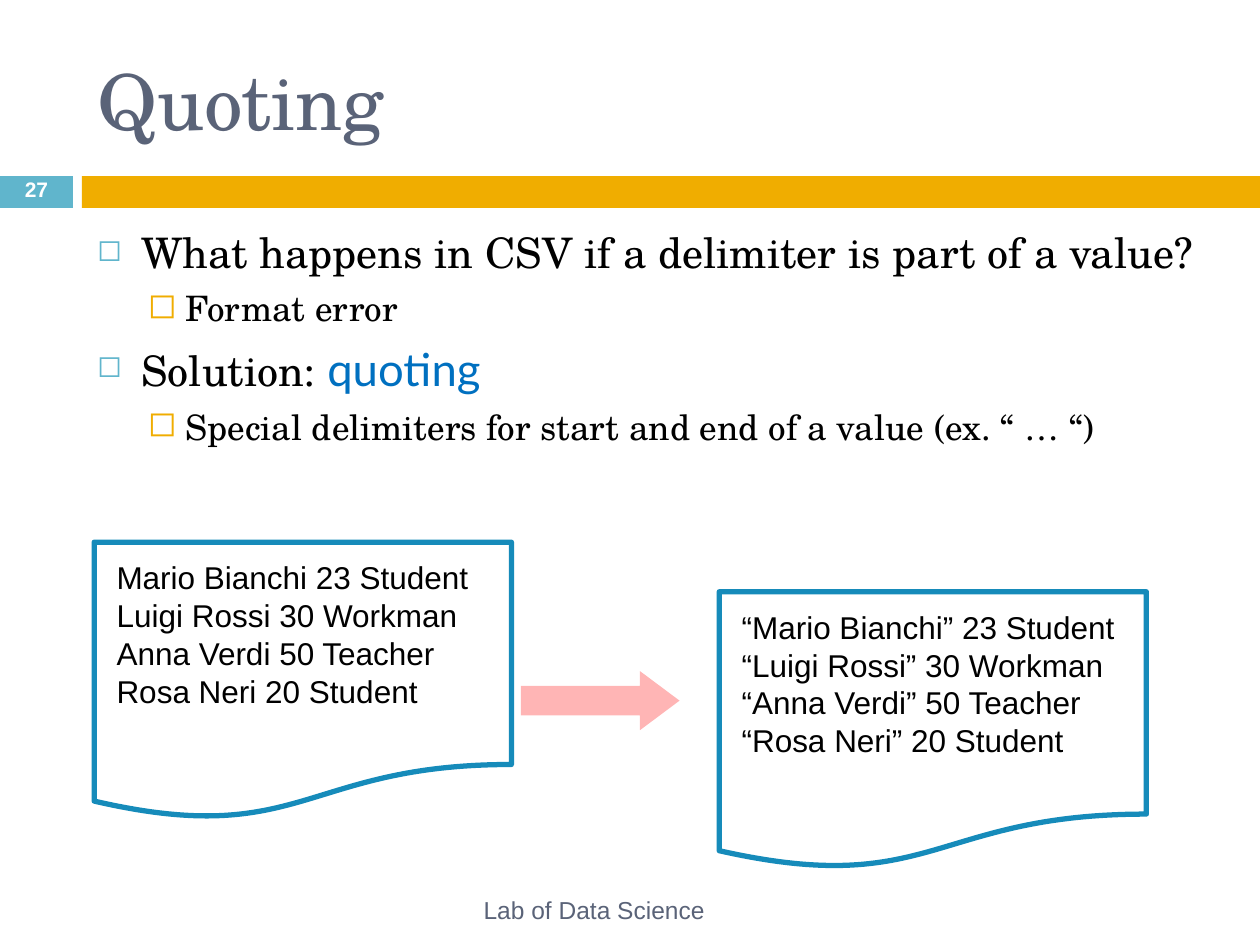
from lxml import etree
from pptx import Presentation
from pptx.dml.color import RGBColor
from pptx.enum.shapes import MSO_SHAPE
from pptx.enum.text import MSO_ANCHOR, PP_ALIGN
from pptx.oxml.ns import qn
from pptx.util import Cm, Pt

RECTANGLE = MSO_SHAPE.RECTANGLE
DOCUMENT = MSO_SHAPE.FLOWCHART_DOCUMENT
RIGHT_ARROW = MSO_SHAPE.RIGHT_ARROW
TOP, MIDDLE = MSO_ANCHOR.TOP, MSO_ANCHOR.MIDDLE
LEFT, CENTER = PP_ALIGN.LEFT, PP_ALIGN.CENTER
SERIF, SANS, ACCENT_FONT = "TeX Gyre Schola", "Arial", "Lato"
BULLET = "◻"
COLORS = {
    "title": "5A6378", "text": "000000", "white": "FFFFFF", "teal": "60B5CC",
    "amber": "F0AD00", "keyword": "0070C0", "outline": "168BBA", "arrow": "FF0000",
}
LEVELS = [
    {"margin": 0.89, "hang": 0.89, "scale": 72, "color": "teal"},
    {"margin": 1.78, "hang": 0.76, "scale": 100, "color": "amber"},
]
BULLETS = [
    (0, 0, [("What happens in CSV if a delimiter is part of a value?", SERIF, 24, "text")]),
    (1, 5.5, [("Format error", SERIF, 20, "text")]),
    (0, 7, [("Solution: ", SERIF, 24, "text"), ("quoting", ACCENT_FONT, 26, "keyword")]),
    (1, 5.5, [("Special delimiters for start and end of a value (ex. “ … “)", SERIF, 20, "text")]),
]
RECORDS = [
    ("Mario Bianchi", "23 Student"),
    ("Luigi Rossi", "30 Workman"),
    ("Anna Verdi", "50 Teacher"),
    ("Rosa Neri", "20 Student"),
]


def rgb(name):
    """Return the named colour."""
    return RGBColor.from_string(COLORS[name])


def add_run(paragraph, text, font, size, color, bold=False):
    """Append one formatted run."""
    run = paragraph.add_run()
    run.text = text
    run.font.name, run.font.size, run.font.bold = font, Pt(size), bold
    run.font.color.rgb = rgb(color)


def add_frame(slide, box, anchor=TOP):
    """Add a wrapping text box and return its text frame."""
    frame = slide.shapes.add_textbox(*map(Cm, box)).text_frame
    frame.word_wrap = True
    frame.vertical_anchor = anchor
    return frame


def add_line(slide, box, text, font, size, color, align=LEFT, bold=False):
    """Add a single middle-anchored line of text and return its paragraph."""
    paragraph = add_frame(slide, box, MIDDLE).paragraphs[0]
    paragraph.alignment = align
    add_run(paragraph, text, font, size, color, bold)
    return paragraph


def add_shape(slide, kind, box, fill=None, outline=None):
    """Add a flat preset shape."""
    shape = slide.shapes.add_shape(kind, *map(Cm, box))
    shape.shadow.inherit = False
    if fill:
        shape.fill.solid()
        shape.fill.fore_color.rgb = rgb(fill)
    else:
        shape.fill.background()
    if outline:
        shape.line.color.rgb = rgb(outline)
        shape.line.width = Pt(3)
    else:
        shape.line.fill.background()
    return shape


def set_bullet(paragraph, level):
    """Give a paragraph the indent and bullet of its level."""
    properties = paragraph._p.get_or_add_pPr()
    properties.set("marL", str(Cm(level["margin"])))
    properties.set("indent", str(-Cm(level["hang"])))
    color = etree.SubElement(properties, qn("a:buClr"))
    etree.SubElement(color, qn("a:srgbClr"), val=COLORS[level["color"]])
    etree.SubElement(properties, qn("a:buSzPct"), val=str(level["scale"] * 1000))
    etree.SubElement(properties, qn("a:buChar"), char=BULLET)


def add_band(slide, left, top, width, height):
    """Draw the divider band with the slide number."""
    number_width, gap = 1.47, 0.18
    number_box = (left, top, number_width, height)
    bar_offset = number_width + gap
    add_shape(slide, RECTANGLE, number_box, "teal")
    add_shape(slide, RECTANGLE, (left + bar_offset, top, width - bar_offset, height), "amber")
    paragraph = add_line(slide, number_box, "27", SANS, 12, "white", CENTER, True)
    paragraph.line_spacing = 0.8


def add_bullets(slide, box):
    """Write the two-level bullet list."""
    frame = add_frame(slide, box)
    for index, (level, space, runs) in enumerate(BULLETS):
        paragraph = frame.add_paragraph() if index else frame.paragraphs[0]
        paragraph.level = level
        paragraph.space_before = Pt(space)
        set_bullet(paragraph, LEVELS[level])
        for run in runs:
            add_run(paragraph, *run)


def add_document(slide, left, top, width, height, pattern):
    """Draw a document outline holding the records."""
    add_shape(slide, DOCUMENT, (left, top, width, height), outline="outline")
    frame = add_frame(slide, (left + 0.2, top + 0.2, 11.2, 3.33))
    for index, record in enumerate(RECORDS):
        paragraph = frame.add_paragraph() if index else frame.paragraphs[0]
        add_run(paragraph, pattern.format(*record), SANS, 18, "text")


def add_arrow(slide, box):
    """Draw the translucent arrow between the documents."""
    arrow = add_shape(slide, RIGHT_ARROW, box, "arrow")
    arrow.adjustments[0], arrow.adjustments[1] = 0.5, 0.67
    color = arrow.fill._xPr.find(qn("a:solidFill"))[0]
    etree.SubElement(color, qn("a:alpha"), val="29000")


def main():
    """Build and save the slide."""
    presentation = Presentation()
    presentation.slide_width, presentation.slide_height = Cm(25.4), Cm(19.05)
    slide = presentation.slides.add_slide(presentation.slide_layouts[6])
    add_band(slide, 0, 3.55, 25.4, 0.64)
    add_line(slide, (1.71, 0.64, 22.66, 2.74), "Quoting", SERIF, 44, "title")
    add_bullets(slide, (1.71, 4.45, 22.66, 12.5))
    add_line(slide, (4.45, 17.83, 15.06, 1.02), "Lab of Data Science", SANS, 14, "title", CENTER)
    add_document(slide, 1.9, 10.93, 8.41, 5.59, "{} {}")
    add_arrow(slide, (10.5, 13.53, 3.2, 1.19))
    add_document(slide, 14.5, 11.93, 8.61, 5.59, "“{}” {}")
    presentation.save("out.pptx")


if __name__ == "__main__":
    main()
